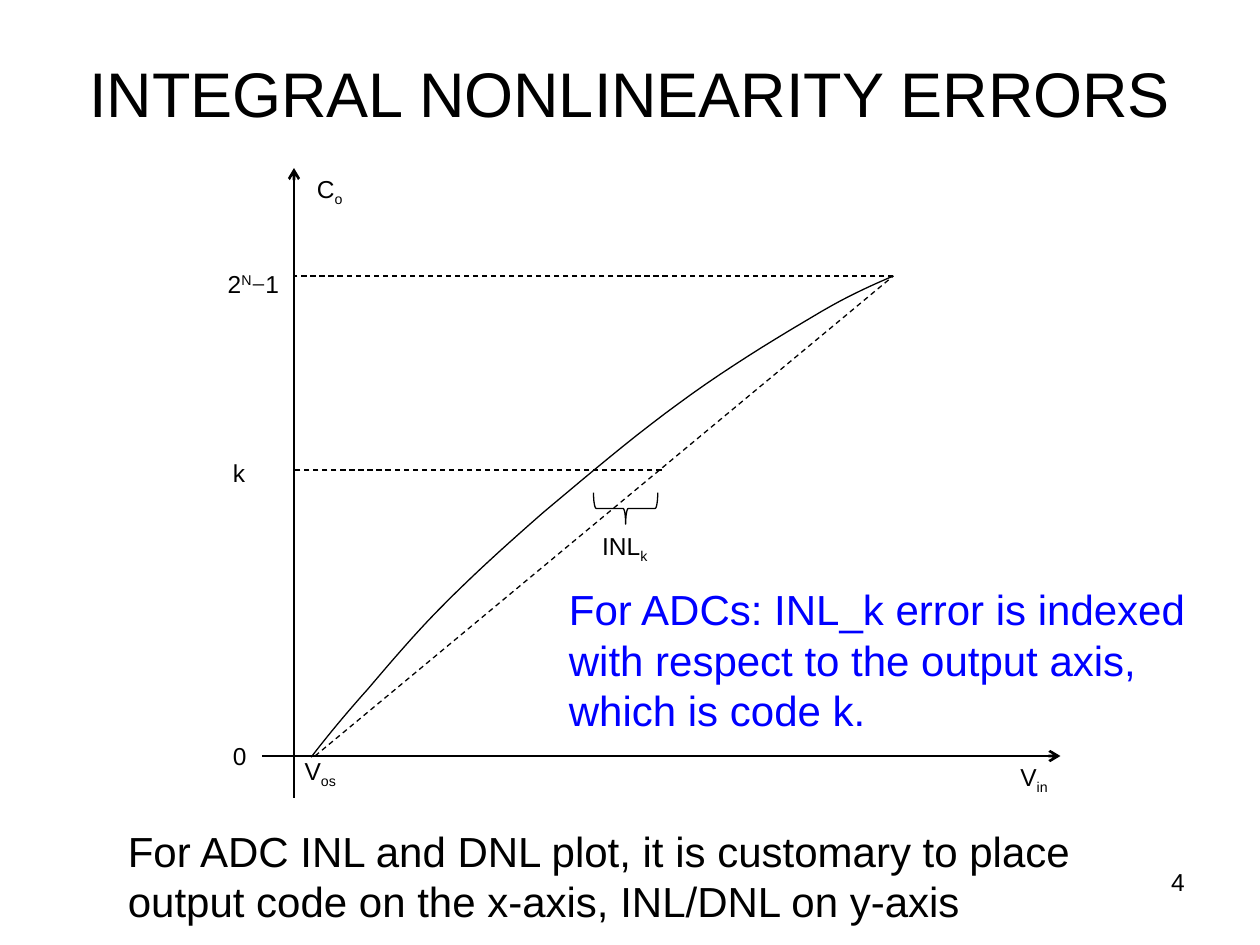
import pptx
import pptx.dml.color
import pptx.enum.dml
import pptx.enum.shapes
import pptx.enum.text
import pptx.oxml.ns
import pptx.util
from lxml import etree

Pt = pptx.util.Pt
Align = pptx.enum.text.PP_ALIGN
Anchor = pptx.enum.text.MSO_ANCHOR
AutoSize = pptx.enum.text.MSO_AUTO_SIZE
Shape = pptx.enum.shapes.MSO_SHAPE
BLACK = pptx.dml.color.RGBColor(0, 0, 0)
BLUE = pptx.dml.color.RGBColor(0, 0, 255)
SUB, SUPER = -25000, 30000

# Transfer curve: start point, then two controls and an end per segment
CURVE = [
    (57.8, 336.7),
    (67.2, 324.5), (77.3, 312.2), (90.2, 297.8),
    (102.5, 283.4), (117.6, 265.4), (134.2, 248.9),
    (150.7, 232.3), (168, 216.5), (190.3, 197),
    (212.6, 178.3), (242.2, 153.1), (268.1, 134.4),
    (293.3, 115.7), (322.8, 97.7), (343.7, 85.4),
    (363.8, 73.2), (377.5, 67.4), (390.5, 61.7),
]
CURVE_STEPS = 10


def write_text(frame, text, size=14, color=BLACK, align=Align.LEFT,
               anchor=Anchor.TOP, wrap=True, font="Arial"):
    """Text is a string, or a list of (string, baseline, font) runs."""
    frame.word_wrap = wrap
    frame.vertical_anchor = anchor
    paragraph = frame.paragraphs[0]
    paragraph.alignment = align
    runs = [(text, 0, font)] if isinstance(text, str) else text
    for words, baseline, face in runs:
        run = paragraph.add_run()
        run.text = words
        run.font.name = face
        run.font.size = Pt(size)
        run.font.color.rgb = color
        if baseline:
            run._r.get_or_add_rPr().set("baseline", str(baseline))


def add_text(slide, box, text, **text_format):
    textbox = slide.shapes.add_textbox(*map(Pt, box))
    write_text(textbox.text_frame, text, **text_format)
    textbox.text_frame.auto_size = AutoSize.SHAPE_TO_FIT_TEXT


def add_line(slide, start, end, width=0.75, dashed=False, arrow=False):
    line = slide.shapes.add_connector(
        pptx.enum.shapes.MSO_CONNECTOR.STRAIGHT, *map(Pt, start + end))
    line.line.color.rgb = BLACK
    line.line.width = Pt(width)
    if dashed:
        line.line.dash_style = pptx.enum.dml.MSO_LINE.DASH
    qn = pptx.oxml.ns.qn
    properties = line._element.spPr
    if arrow:
        etree.SubElement(properties.find(qn("a:ln")), qn("a:tailEnd"), type="arrow")
    etree.SubElement(properties, qn("a:effectLst"))


def outline(shape):
    shape.shadow.inherit = False
    shape.fill.background()
    shape.line.color.rgb = BLACK
    shape.line.width = Pt(0.75)


def bezier_points(points, steps):
    """Follow a chain of cubic segments, leaving out the start point."""
    for first in range(0, len(points) - 1, 3):
        segment = points[first:first + 4]
        for step in range(1, steps + 1):
            t = step / steps
            weights = ((1 - t) ** 3, 3 * t * (1 - t) ** 2, 3 * t * t * (1 - t), t ** 3)
            yield tuple(sum(w * p[axis] for w, p in zip(weights, segment))
                        for axis in (0, 1))


def build_title(slide, box):
    title = slide.shapes.title
    title.left, title.top, title.width, title.height = map(Pt, box)
    write_text(title.text_frame, "INTEGRAL NONLINEARITY ERRORS", size=36,
               align=Align.CENTER, anchor=Anchor.MIDDLE)


def build_plot(slide, box):
    left, top, width, height = box

    def at(x, y):
        return left + x, top + y

    axis_x, zero_y = 48, 336
    full_x, full_y = 390.5, 61.7
    code_x, code_y = 258, 172.5

    # Actual transfer curve
    start, *rest = [at(*point) for point in
                    [CURVE[0], *bezier_points(CURVE, CURVE_STEPS)]]
    builder = slide.shapes.build_freeform(*map(Pt, start))
    builder.add_line_segments([tuple(map(Pt, point)) for point in rest], close=False)
    outline(builder.convert_to_shape())

    # Axes
    add_line(slide, at(30, zero_y), at(width, zero_y), width=1.5, arrow=True)
    add_line(slide, at(axis_x, height), at(axis_x, 0), width=1.5, arrow=True)

    # Ideal line and code levels
    for line_start, line_end in (
            ((60, zero_y), (full_x, full_y)),
            ((full_x, full_y), (axis_x, full_y)),
            ((code_x, code_y), (axis_x, code_y))):
        add_line(slide, at(*line_start), at(*line_end), dashed=True)

    # Brace under the error at code k
    brace = slide.shapes.add_shape(
        Shape.RIGHT_BRACE, *map(Pt, at(228.5, 176.2) + (18, 36.7)))
    brace.rotation = 90
    brace.adjustments[0] = 0.083
    brace.adjustments[1] = 0.5
    outline(brace)

    # Labels
    def with_subscript(symbol, subscript):
        return [(symbol, 0, "Arial"), (subscript, SUB, "Arial")]

    full_scale = [("2", 0, "Arial"), ("N", SUPER, "Arial"),
                  ("−", 0, "Times New Roman"), ("1", 0, "Arial")]
    for x, y, label_width, label in (
            (3, 54, 44.6, full_scale),
            (6, 324, 22, "0"),
            (6, 162, 21.6, "k"),
            (47, 332.5, 33, with_subscript("V", "os")),
            (217, 204, 41, with_subscript("INL", "k")),
            (456, 336, 31, with_subscript("V", "in")),
            (54, 0, 30, with_subscript("C", "o"))):
        add_text(slide, at(x, y) + (label_width, 24.3), label, wrap=False)


def build_notes(slide, box):
    left, top, width, height = box
    add_text(slide, (left + 252, top, 378, 94.5),
             "For ADCs: INL_k error is indexed with respect to the output axis, "
             "which is code k.", size=24, color=BLUE)
    add_text(slide, (left, top + 138, 576, 65.4),
             "For ADC INL and DNL plot, it is customary to place output code on "
             "the x-axis, INL/DNL on y-axis", size=24)


def build_page_number(slide, box):
    add_text(slide, box, "4", align=Align.RIGHT)


def main():
    presentation = pptx.Presentation()
    presentation.slide_width, presentation.slide_height = Pt(720), Pt(540)
    slide = presentation.slides.add_slide(presentation.slide_layouts[5])
    build_title(slide, (36, 21.6, 648, 62.6))
    build_plot(slide, (120, 96, 486, 360))
    build_notes(slide, (66, 330, 630, 203.4))
    build_page_number(slide, (516, 492, 168, 37.5))
    presentation.save("out.pptx")


if __name__ == "__main__":
    main()
